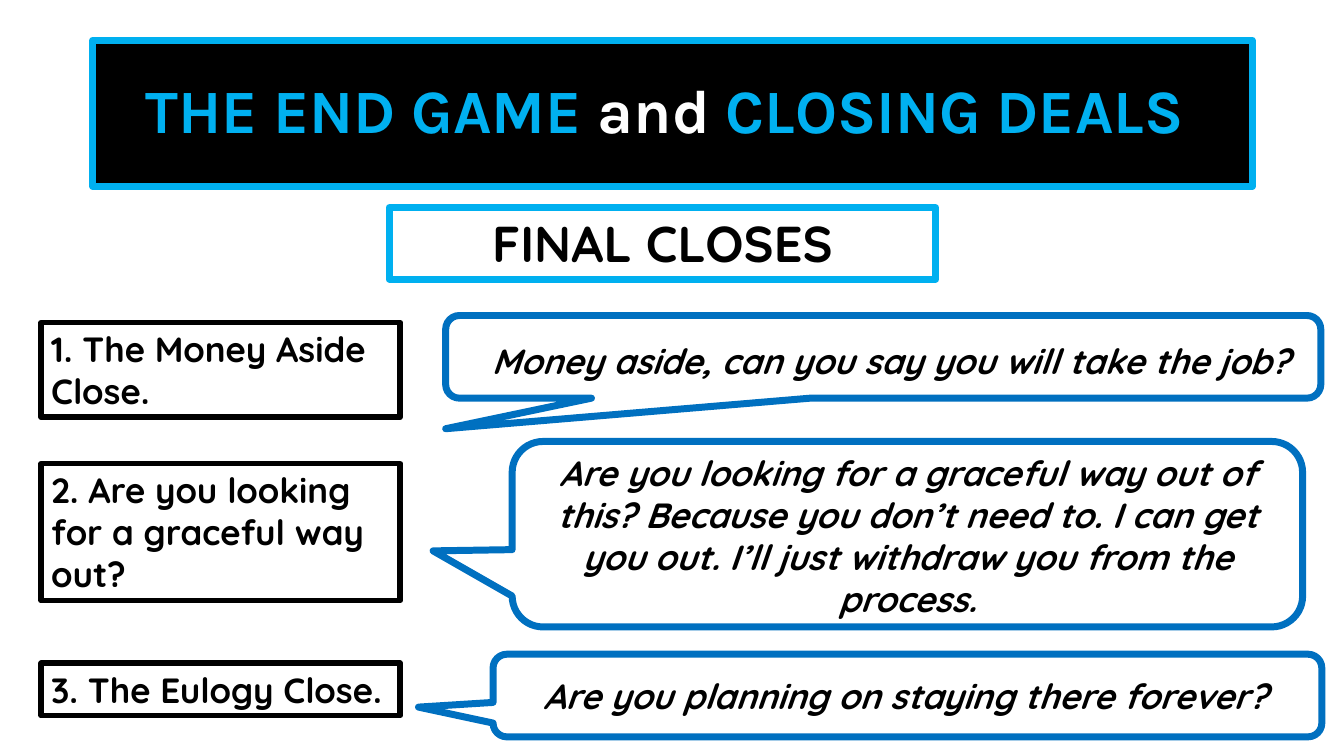
import pptx
import pptx.dml.color
import pptx.enum.shapes
import pptx.enum.text
import pptx.util
from pptx.util import Inches

RGB = pptx.dml.color.RGBColor
SHAPE = pptx.enum.shapes.MSO_SHAPE
ALIGN = pptx.enum.text.PP_ALIGN
ANCHOR = pptx.enum.text.MSO_ANCHOR

THEME = {
    "black": RGB(0x00, 0x00, 0x00),
    "white": RGB(0xFF, 0xFF, 0xFF),
    "sky": RGB(0x00, 0xB0, 0xF0),
    "blue": RGB(0x00, 0x70, 0xC0),
    "title_font": "Karla",
    "body_font": "Quicksand",
    "title_size": pptx.util.Pt(44),
    "heading_size": pptx.util.Pt(36),
    "body_size": pptx.util.Pt(25),
    "thick": pptx.util.Pt(5),
    "thin": pptx.util.Pt(4),
}

deck = pptx.Presentation()
deck.slide_width, deck.slide_height = Inches(13.33), Inches(7.5)
slide = deck.slides.add_slide(deck.slide_layouts[6])


def add_outlined(kind, place, color, width):
    """Add an unfilled preset shape with a coloured outline."""
    shape = slide.shapes.add_shape(kind, *map(Inches, place))
    shape.shadow.inherit = False
    shape.fill.background()
    shape.line.color.rgb = color
    shape.line.width = width
    return shape


def write_text(shape, text, size, align, italic=False):
    frame = shape.text_frame
    frame.word_wrap = True
    frame.vertical_anchor = ANCHOR.TOP
    paragraph = frame.paragraphs[0]
    paragraph.text = text
    paragraph.alignment = align
    paragraph.font.name = THEME["body_font"]
    paragraph.font.size = size
    paragraph.font.bold = True
    paragraph.font.italic = italic
    paragraph.font.color.rgb = THEME["black"]


# Title banner
banner = add_outlined(SHAPE.RECTANGLE, (0.92, 0.4, 11.5, 1.45), THEME["sky"], THEME["thick"])
banner.fill.solid()
banner.fill.fore_color.rgb = THEME["black"]
banner.text_frame.word_wrap = True
banner.text_frame.vertical_anchor = ANCHOR.MIDDLE
title = banner.text_frame.paragraphs[0]
title.alignment = ALIGN.CENTER
title.line_spacing = 0.9
title.font.name = THEME["title_font"]
title.font.size = THEME["title_size"]
title.font.bold = True
for words, color in (("THE END GAME ", "sky"), ("and", "white"), (" CLOSING DEALS ", "sky")):
    run = title.add_run()
    run.text = words
    run.font.color.rgb = THEME[color]

# Heading
heading = add_outlined(SHAPE.RECTANGLE, (3.86, 2.06, 5.42, 0.71), THEME["sky"], THEME["thick"])
write_text(heading, "FINAL CLOSES", THEME["heading_size"], ALIGN.CENTER)

# Each close: name, top and height; bubble place and tail tip; quote and its place
closes = [
    ("1. The Money Aside Close.", 3.2, 0.94,
     (4.42, 3.13, 8.68, 0.82), (-0.5, 0.87),
     "Money aside, can you say you will take the job?", (4.55, 3.32, 8.57, 0.52)),
    ("2. Are you looking for a graceful way out?", 4.6, 1.36,
     (5.08, 4.38, 7.84, 1.84), (-0.6, 0.09),
     "Are you looking for a graceful way out of this? Because you don’t need to. "
     "I can get you out. I’ll just withdraw you from the process.", (5.41, 4.43, 7.18, 1.78)),
    ("3. The Eulogy Close.", 6.58, 0.52,
     (4.89, 6.49, 8.22, 0.82), (-0.59, 0.14),
     "Are you planning on staying there forever?", (5.16, 6.64, 7.64, 0.52)),
]

for name, top, height, bubble_place, tail, quote, quote_place in closes:
    bubble = add_outlined(SHAPE.ROUNDED_RECTANGULAR_CALLOUT, bubble_place,
                          THEME["blue"], THEME["thick"])
    bubble.adjustments[0], bubble.adjustments[1] = tail
    speech = slide.shapes.add_textbox(*map(Inches, quote_place))
    write_text(speech, quote, THEME["body_size"], ALIGN.CENTER, italic=True)
    label = add_outlined(SHAPE.RECTANGLE, (0.41, top, 3.56, height),
                         THEME["black"], THEME["thin"])
    write_text(label, name, THEME["body_size"], ALIGN.LEFT)

deck.save("out.pptx")
